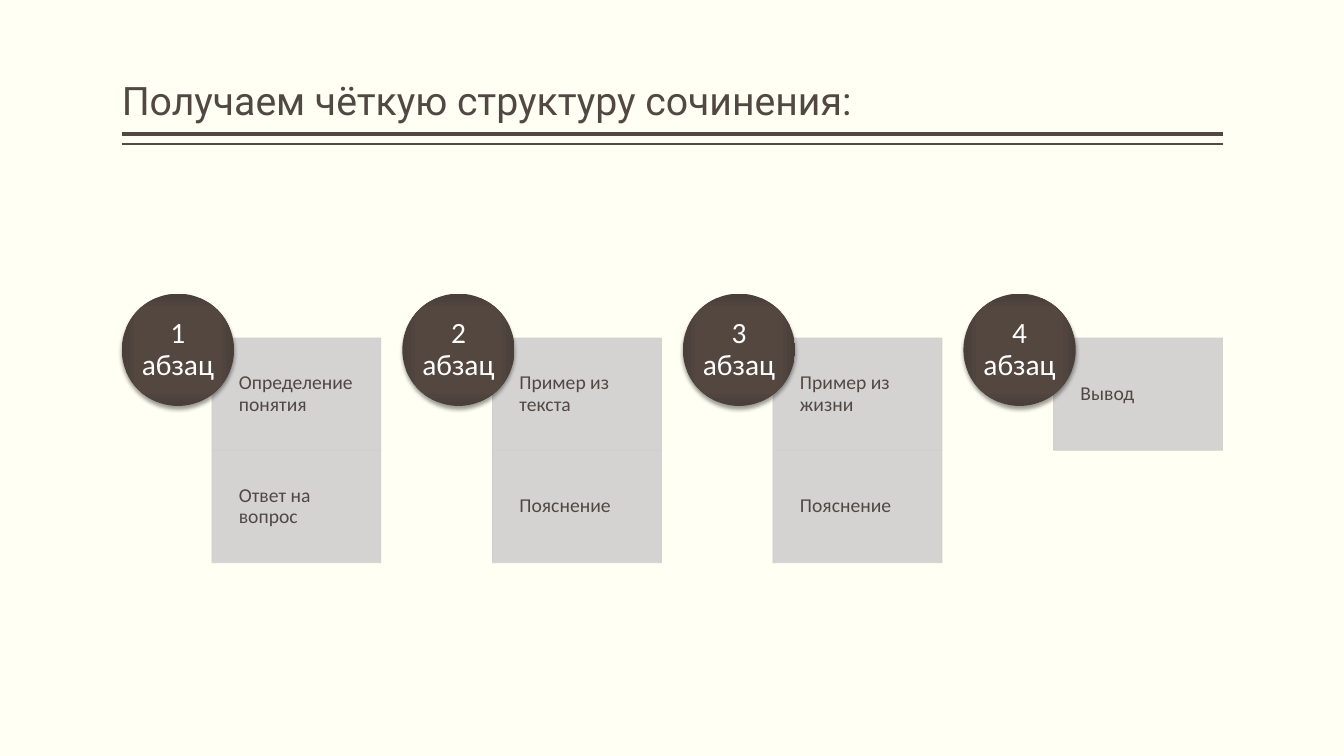
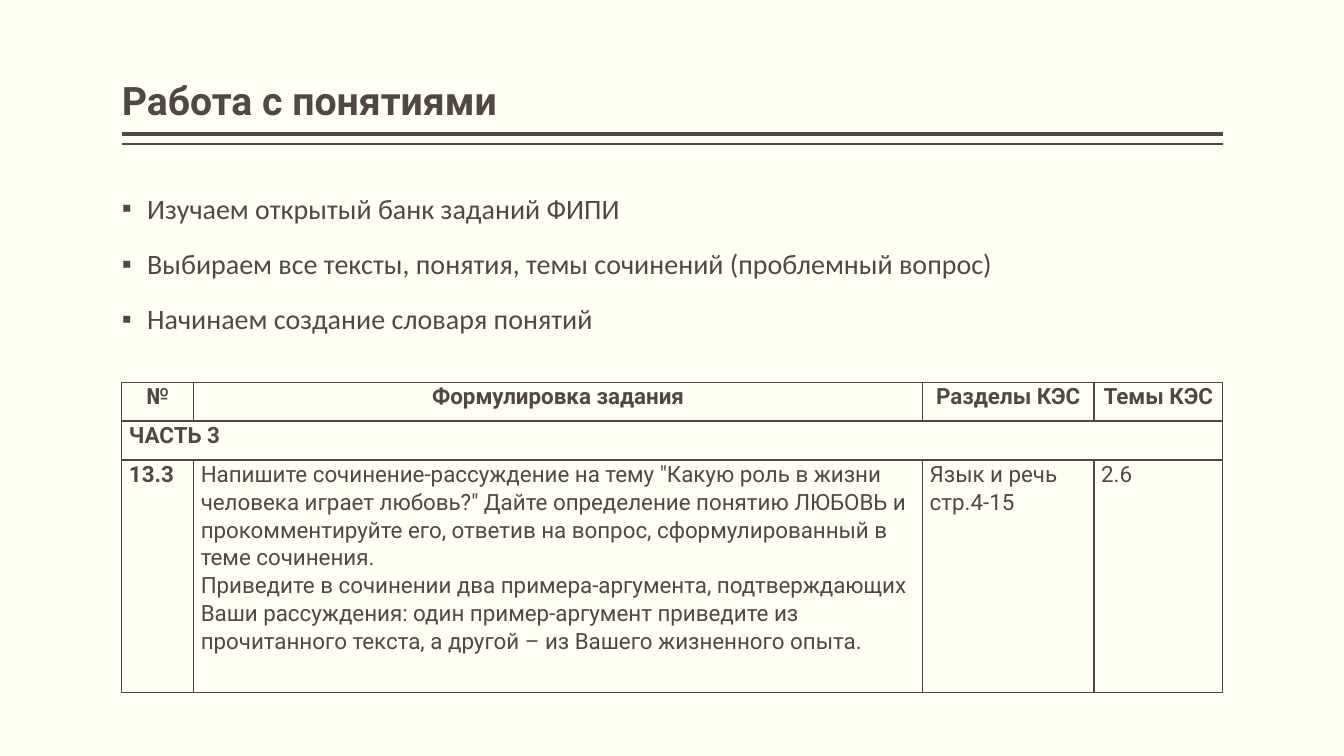
from dataclasses import dataclass

from lxml.etree import SubElement
from pptx import Presentation
from pptx.dml.color import RGBColor
from pptx.enum.shapes import MSO_CONNECTOR, MSO_SHAPE
from pptx.enum.text import MSO_ANCHOR, MSO_AUTO_SIZE, PP_ALIGN
from pptx.oxml import parse_xml
from pptx.oxml.ns import nsdecls, qn
from pptx.presentation import Presentation as Deck
from pptx.shapes.autoshape import Shape
from pptx.slide import Slide
from pptx.table import _Cell as Cell
from pptx.text.text import TextFrame
from pptx.util import Cm, Pt

# Colours and fonts
CREAM = RGBColor(0xFF, 0xFF, 0xF3)
BROWN = RGBColor(0x51, 0x48, 0x43)
GREY = RGBColor(0xD0, 0xCF, 0xCF)
WHITE = RGBColor(0xFF, 0xFF, 0xFF)
BLACK = RGBColor(0x00, 0x00, 0x00)
BADGE_STOPS = (
    (0, RGBColor(0x54, 0x47, 0x40)),
    (71, RGBColor(0x53, 0x47, 0x40)),
    (100, RGBColor(0x4A, 0x3F, 0x39)),
)
HEADING_FONT = "Roboto"
BODY_FONT = "Calibri"

# Shared layout, in centimetres
LEFT = 3.07
WIDTH = 27.74
TITLE_TOP, TITLE_HEIGHT = 0.2, 3.05

# Columns of the essay structure
COLUMN_PITCH = 7.07
BADGE_TOP, BADGE_SIZE = 7.4, 2.83
CARD_OFFSET, CARD_TOP = 2.27, 8.52
CARD_WIDTH, CARD_HEIGHT = 4.26, 2.83


@dataclass(frozen=True)
class Rule:
    top: float
    weight: float


@dataclass(frozen=True)
class Style:
    font: str
    size: float
    color: RGBColor = BROWN
    bold: bool = False
    align: PP_ALIGN = PP_ALIGN.LEFT
    spacing: float = 0.9


@dataclass(frozen=True)
class Column:
    badge: str
    cards: tuple[str, ...]


@dataclass(frozen=True)
class Entry:
    text: str
    bold: bool = False
    align: PP_ALIGN = PP_ALIGN.LEFT


RULES = (Rule(3.38, 3), Rule(3.63, 1))

COLUMNS = (
    Column("1 абзац", ("Определение понятия", "Ответ на вопрос")),
    Column("2 абзац", ("Пример из текста", "Пояснение")),
    Column("3 абзац", ("Пример из жизни", "Пояснение")),
    Column("4 абзац", ("Вывод",)),
)

STEPS = (
    "Изучаем открытый банк заданий ФИПИ",
    "Выбираем все тексты, понятия, темы сочинений (проблемный вопрос)",
    "Начинаем создание словаря понятий",
)

HEADERS = ("№", "Формулировка задания", "Разделы КЭС", "Темы КЭС")
TASK = (
    'Напишите сочинение-рассуждение на тему "Какую роль в жизни человека '
    'играет любовь?" Дайте определение понятию ЛЮБОВЬ и прокомментируйте '
    "его, ответив на вопрос, сформулированный в теме сочинения.\n"
    "Приведите в сочинении два примера-аргумента, подтверждающих Ваши "
    "рассуждения: один пример-аргумент приведите из прочитанного текста, "
    "а другой – из Вашего жизненного опыта."
)
TABLE_ROWS = (
    tuple(Entry(header, True, PP_ALIGN.CENTER) for header in HEADERS),
    (Entry("ЧАСТЬ 3", True),),
    (Entry("13.3", True), Entry(TASK), Entry("Язык и речь\nстр.4-15"), Entry("2.6")),
)
TABLE_TOP = 9.63
TABLE_WIDTHS = (1.81, 18.37, 4.32, 3.24)
TABLE_HEIGHTS = (0.98, 0.98, 5.87)


def write(frame: TextFrame, text: str, style: Style) -> None:
    """Fill a text frame and format every paragraph alike."""
    frame.text = text
    for paragraph in frame.paragraphs:
        paragraph.alignment = style.align
        paragraph.line_spacing = style.spacing
        for span in paragraph.runs:
            span.font.name = style.font
            span.font.size = Pt(style.size)
            span.font.bold = style.bold
            span.font.color.rgb = style.color


def set_margins(frame: TextFrame, left: float, top: float, right: float, bottom: float) -> None:
    frame.margin_left, frame.margin_top = Cm(left), Cm(top)
    frame.margin_right, frame.margin_bottom = Cm(right), Cm(bottom)


def place(box: Shape, left: float, top: float, width: float, height: float) -> None:
    box.left, box.top = Cm(left), Cm(top)
    box.width, box.height = Cm(width), Cm(height)


def add_page(deck: Deck, layout: int, title: str, bold: bool = False) -> Slide:
    """Add a slide with the shared title and double rule."""
    page = deck.slides.add_slide(deck.slide_layouts[layout])
    for rule in RULES:
        line = page.shapes.add_connector(
            MSO_CONNECTOR.STRAIGHT,
            Cm(LEFT), Cm(rule.top), Cm(LEFT + WIDTH), Cm(rule.top),
        )
        line.line.color.rgb = BROWN
        line.line.width = Pt(rule.weight)
        SubElement(line.element.spPr, qn("a:effectLst"))
    box = page.shapes.title
    place(box, LEFT, TITLE_TOP, WIDTH, TITLE_HEIGHT)
    frame = box.text_frame
    set_margins(frame, 0, 0.13, 0, 0.13)
    frame.vertical_anchor = MSO_ANCHOR.BOTTOM
    frame.auto_size = MSO_AUTO_SIZE.NONE
    write(frame, title, Style(HEADING_FONT, 28, bold=bold))
    return page


def add_shape(page: Slide, kind: MSO_SHAPE, left: float, top: float,
              width: float, height: float) -> Shape:
    box = page.shapes.add_shape(kind, Cm(left), Cm(top), Cm(width), Cm(height))
    box.shadow.inherit = False
    box.text_frame.word_wrap = True
    box.text_frame.vertical_anchor = MSO_ANCHOR.MIDDLE
    return box


def add_card(page: Slide, left: float, top: float, text: str) -> None:
    box = add_shape(page, MSO_SHAPE.RECTANGLE, left, top, CARD_WIDTH, CARD_HEIGHT)
    box.fill.solid()
    box.fill.fore_color.rgb = GREY
    box.line.color.rgb = GREY
    box.line.width = Pt(0.5)
    # Slight transparency of fill and outline
    for color in list(box.element.spPr.iter(qn("a:srgbClr"))):
        SubElement(color, qn("a:alpha"), val="90000")
    set_margins(box.text_frame, 0.68, 0.28, 0.28, 0.28)
    write(box.text_frame, text, Style(BODY_FONT, 14))


def add_badge(page: Slide, left: float, text: str) -> None:
    box = add_shape(page, MSO_SHAPE.OVAL, left, BADGE_TOP, BADGE_SIZE, BADGE_SIZE)
    box.fill.background()
    box.line.fill.background()
    properties = box.element.spPr
    # Gradient from the centre to the rim
    stops = "".join(
        f'<a:gs pos="{position * 1000}"><a:srgbClr val="{color}"/></a:gs>'
        for position, color in BADGE_STOPS
    )
    gradient = parse_xml(
        f'<a:gradFill {nsdecls("a")} rotWithShape="1"><a:gsLst>{stops}</a:gsLst>'
        '<a:path path="rect"><a:fillToRect l="50000" t="50000" r="50000" b="50000"/>'
        "</a:path></a:gradFill>"
    )
    properties.replace(properties.find(qn("a:noFill")), gradient)
    # Soft shadow below
    shadow = SubElement(
        properties.find(qn("a:effectLst")), qn("a:outerShdw"),
        blurRad=str(Pt(3.1)), dist=str(Pt(2)), dir="5400000", rotWithShape="0",
    )
    color = SubElement(shadow, qn("a:srgbClr"), val=str(BLACK))
    SubElement(color, qn("a:alpha"), val="38000")
    set_margins(box.text_frame, 0, 0, 0, 0)
    write(box.text_frame, text, Style(BODY_FONT, 21, WHITE, align=PP_ALIGN.CENTER))


def add_steps(page: Slide) -> None:
    """Fill the body placeholder with the bulleted steps."""
    box = page.placeholders[1]
    place(box, LEFT, 4.78, WIDTH, 12.7)
    frame = box.text_frame
    set_margins(frame, 0, 0.13, 0, 0.13)
    frame.auto_size = MSO_AUTO_SIZE.NONE
    write(frame, "\n".join(STEPS), Style(BODY_FONT, 20))
    for paragraph in frame.paragraphs:
        paragraph.space_before = Pt(18)
        properties = paragraph._p.get_or_add_pPr()
        properties.set("marL", str(Cm(0.64)))
        properties.set("indent", str(-Cm(0.64)))
        SubElement(properties, qn("a:buChar"), char="▪")


def format_cell(cell: Cell) -> None:
    """Clear the fill, set margins and draw all four borders."""
    cell.fill.background()
    cell.margin_left = cell.margin_right = Cm(0.18)
    cell.margin_top = cell.margin_bottom = 0
    properties = cell._tc.get_or_add_tcPr()
    for position, side in enumerate(("lnL", "lnR", "lnT", "lnB")):
        border = parse_xml(
            f'<a:{side} {nsdecls("a")} w="{Pt(1)}"><a:solidFill>'
            f'<a:srgbClr val="{BROWN}"/></a:solidFill></a:{side}>'
        )
        properties.insert(position, border)


def add_task_table(page: Slide) -> None:
    table = page.shapes.add_table(
        len(TABLE_HEIGHTS), len(TABLE_WIDTHS),
        Cm(LEFT), Cm(TABLE_TOP), Cm(WIDTH), Cm(sum(TABLE_HEIGHTS)),
    ).table
    table.first_row = table.horz_banding = False
    for column, width in zip(table.columns, TABLE_WIDTHS):
        column.width = Cm(width)
    for row, height in zip(table.rows, TABLE_HEIGHTS):
        row.height = Cm(height)
    for cell in table.iter_cells():
        format_cell(cell)
    table.cell(1, 0).merge(table.cell(1, len(TABLE_WIDTHS) - 1))
    for row, entries in zip(table.rows, TABLE_ROWS):
        for cell, entry in zip(row.cells, entries):
            style = Style(HEADING_FONT, 16, bold=entry.bold, align=entry.align, spacing=1.07)
            write(cell.text_frame, entry.text, style)


def build_structure(deck: Deck) -> None:
    page = add_page(deck, 5, "Получаем чёткую структуру сочинения:")
    for index, column in enumerate(COLUMNS):
        left = LEFT + index * COLUMN_PITCH
        for level, text in enumerate(column.cards):
            add_card(page, left + CARD_OFFSET, CARD_TOP + level * CARD_HEIGHT, text)
        add_badge(page, left, column.badge)


def build_concepts(deck: Deck) -> None:
    page = add_page(deck, 1, "Работа с понятиями", bold=True)
    add_steps(page)
    add_task_table(page)


def main() -> None:
    deck = Presentation()
    deck.slide_width, deck.slide_height = Cm(33.87), Cm(19.05)
    background = deck.slide_master.background.fill
    background.solid()
    background.fore_color.rgb = CREAM
    build_structure(deck)
    build_concepts(deck)
    deck.save("out.pptx")


if __name__ == "__main__":
    main()
